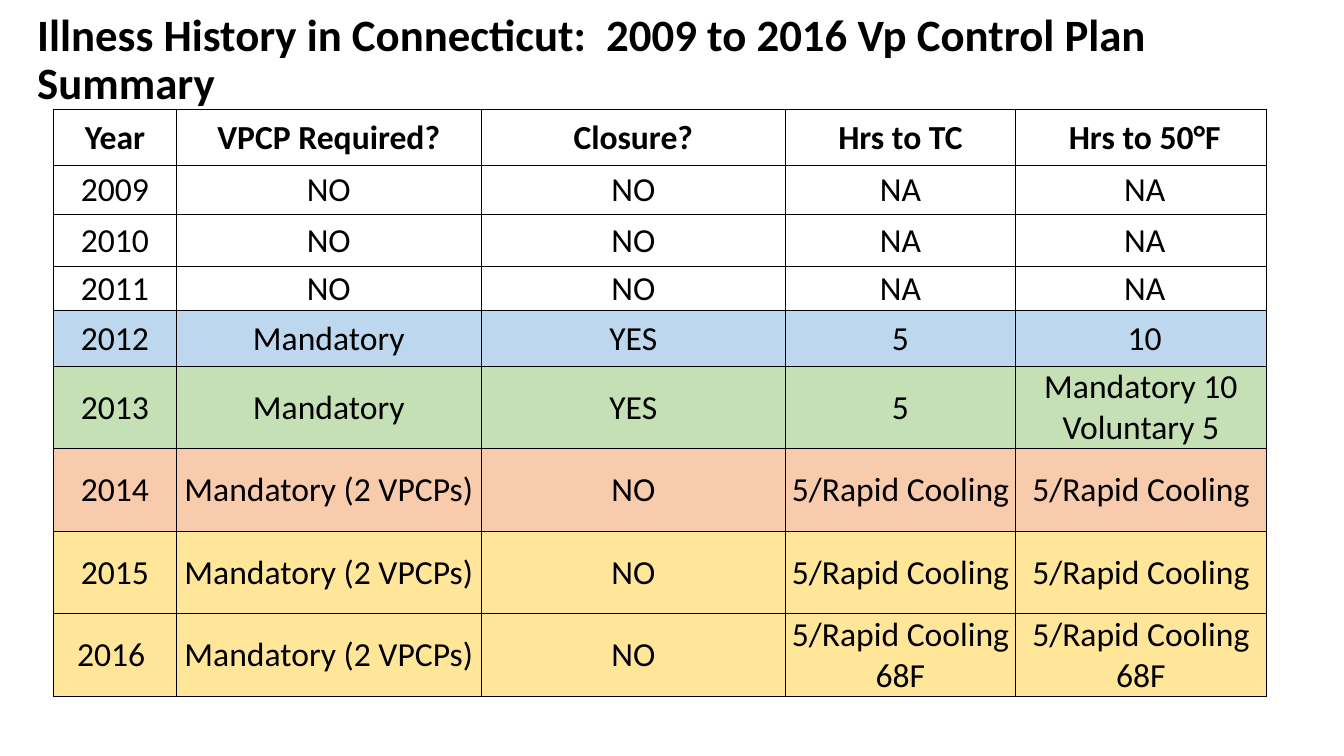
from dataclasses import dataclass

from lxml import etree
from pptx import Presentation
from pptx.dml.color import RGBColor
from pptx.enum.text import MSO_ANCHOR, PP_ALIGN
from pptx.oxml.ns import qn
from pptx.util import Emu, Inches, Pt

MIDDLE = MSO_ANCHOR.MIDDLE
LEFT, CENTER = PP_ALIGN.LEFT, PP_ALIGN.CENTER
WIDE, HIGH = Inches(13.33), Inches(7.5)
FONT, INK = "Calibri", "000000"
BLUE, GREEN, PEACH, GOLD = "BDD7EE", "C5E0B4", "F8CBAD", "FFE699"

TITLE = "Illness History in Connecticut:  2009 to 2016 Vp Control Plan Summary"
COLS = [9.15, 22.66, 22.66, 17.1, 18.68]  # percent of slide width
TALL = 10.93  # percent of slide height
TWO, RAPID = "Mandatory (2 VPCPs)", "5/Rapid Cooling"


@dataclass
class Row:
    """One table row; height is a percent of the slide's height."""
    height: float
    cells: list[str]
    fill: str = ""
    bold: bool = False


ROWS = [
    Row(7.47, ["Year", "VPCP Required?", "Closure?", "Hrs to TC", " Hrs to 50°F"], bold=True),
    Row(6.53, ["2009", "NO", "NO", "NA", " NA"]),
    Row(6.8, ["2010", "NO", "NO", "NA", " NA"]),
    Row(5.87, ["2011", "NO", "NO", "NA", " NA"]),
    Row(7.33, ["2012", "Mandatory", "YES", "5", " 10"], BLUE),
    Row(TALL, ["2013", "Mandatory", "YES", "5", "Mandatory 10\nVoluntary 5"], GREEN),
    Row(TALL, ["2014", TWO, "NO", RAPID, RAPID], PEACH),
    Row(TALL, ["2015", TWO, "NO", RAPID, RAPID], GOLD),
    Row(TALL, ["2016 ", TWO, "NO", RAPID + " 68F", RAPID + "\n68F"], GOLD),
]


def across(share: float) -> Emu:
    """Percent of the slide's width."""
    return Emu(round(WIDE * share / 100))


def down(share: float) -> Emu:
    """Percent of the slide's height."""
    return Emu(round(HIGH * share / 100))


def tint(code: str) -> RGBColor:
    return RGBColor.from_string(code)


def write(frame, text: str, size: float, bold: bool, align, space: float = 1.0) -> None:
    """Fill a text frame, one paragraph for each line of text."""
    for i, line in enumerate(text.split("\n")):
        para = frame.add_paragraph() if i else frame.paragraphs[0]
        para.alignment = align
        para.line_spacing = space
        run = para.add_run()
        run.text = line
        font = run.font
        font.name, font.size, font.bold = FONT, Pt(size), bold
        font.color.rgb = tint(INK)


def border(cell) -> None:
    props = cell._tc.get_or_add_tcPr()
    for side in ("lnL", "lnR", "lnT", "lnB"):
        line = etree.SubElement(props, qn(f"a:{side}"), w=str(Pt(0.5)))
        fill = etree.SubElement(line, qn("a:solidFill"))
        etree.SubElement(fill, qn("a:srgbClr"), val=INK)


def draw_title(slide) -> None:
    box = slide.shapes.add_textbox(across(2.03), down(1.73), across(95.5), down(12.67))
    frame = box.text_frame
    frame.word_wrap = True
    frame.vertical_anchor = MIDDLE
    write(frame, TITLE, 32, True, LEFT, 0.9)


def draw_cell(cell, text: str, row: Row) -> None:
    cell.margin_left = cell.margin_right = cell.margin_top = Inches(0.01)
    cell.margin_bottom = 0
    cell.vertical_anchor = MIDDLE
    border(cell)
    if row.fill:
        cell.fill.solid()
        cell.fill.fore_color.rgb = tint(row.fill)
    else:
        cell.fill.background()
    write(cell.text_frame, text, 24, row.bold, CENTER)


def draw_table(slide) -> None:
    table = slide.shapes.add_table(
        len(ROWS), len(COLS), across(3.98), down(14.4),
        across(sum(COLS)), down(sum(row.height for row in ROWS))).table
    table.first_row = table.horz_banding = False
    for col, share in zip(table.columns, COLS):
        col.width = across(share)
    for y, row in enumerate(ROWS):
        table.rows[y].height = down(row.height)
        for x, text in enumerate(row.cells):
            draw_cell(table.cell(y, x), text, row)


def main() -> None:
    deck = Presentation()
    deck.slide_width, deck.slide_height = WIDE, HIGH
    slide = deck.slides.add_slide(deck.slide_layouts[6])
    draw_title(slide)
    draw_table(slide)
    deck.save("out.pptx")


if __name__ == "__main__":
    main()
